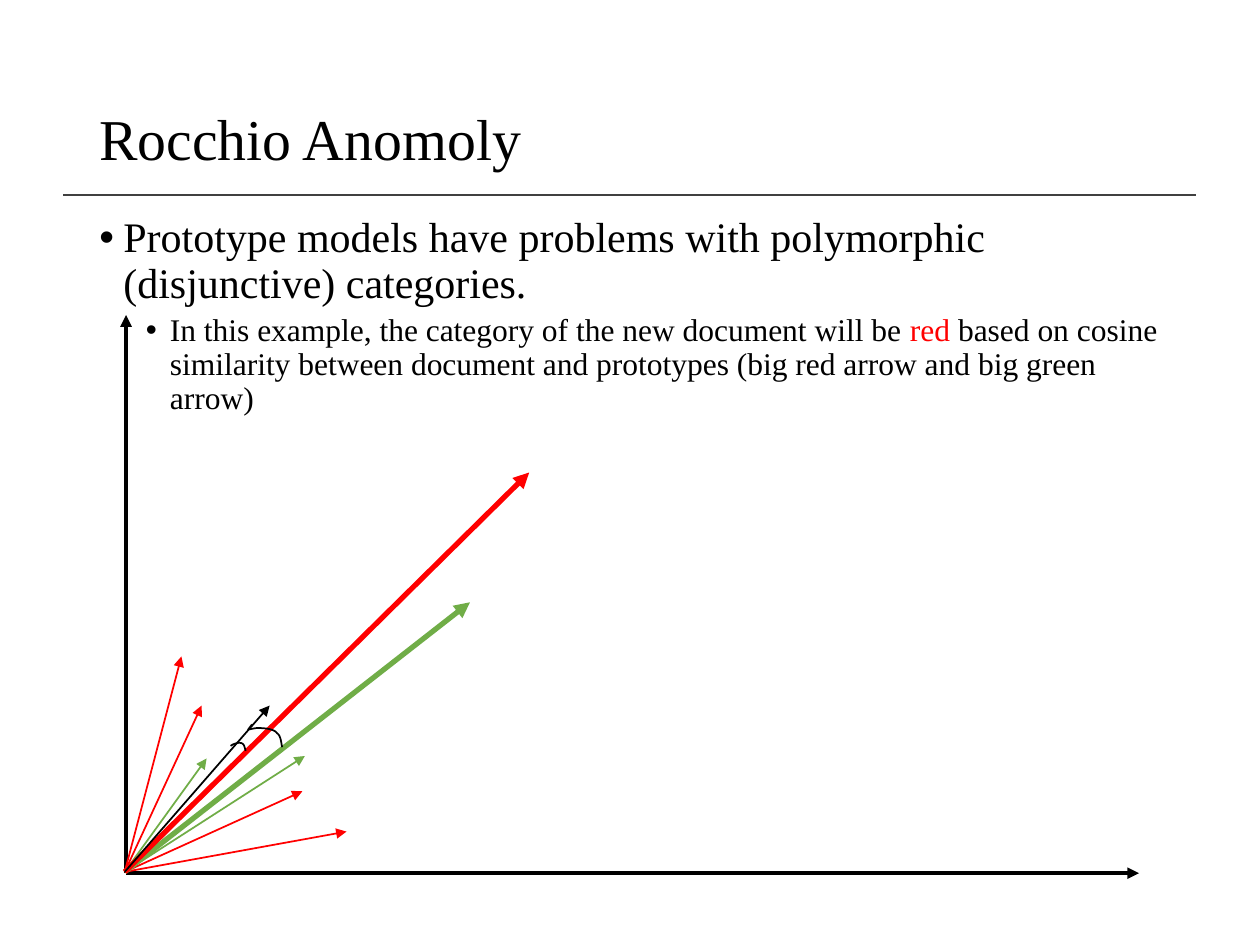
import lxml.etree
import pptx
import pptx.dml.color
import pptx.enum.shapes
import pptx.enum.text
import pptx.oxml.ns
import pptx.util

BLACK = pptx.dml.color.RGBColor(0x00, 0x00, 0x00)
GRAY = pptx.dml.color.RGBColor(0x40, 0x40, 0x40)
RED = pptx.dml.color.RGBColor(0xFF, 0x00, 0x00)
GREEN = pptx.dml.color.RGBColor(0x70, 0xAD, 0x47)
FONT = "Times New Roman"

COLUMNS, ROWS = 100, 75
SLIDE_WIDTH, SLIDE_HEIGHT = pptx.util.Inches(10), pptx.util.Inches(7.5)
ORIGIN = (9.9, 69.2)
CURVE_STEPS = 12

# Each bullet: size, left margin in columns, space before, runs of text and colour
BULLETS = [
    (24, 1.9, 7.5, [
        ("Prototype models have problems with polymorphic (disjunctive) categories.", BLACK),
    ]),
    (18, 5.6, 3.8, [
        ("In this example, the category of the new document will be ", BLACK),
        ("red", RED),
        (" based on cosine similarity between document and prototypes "
         "(big red arrow and big green arrow)", BLACK),
    ]),
]

# Each vector: tip, colour, line width
DOCUMENT_VECTORS = [
    ((14.4, 52.1), RED, 1),
    ((16, 56), RED, 1),
    ((16.4, 60.2), GREEN, 1),
    ((24.2, 60), GREEN, 1),
    ((24, 62.8), RED, 1),
    ((27.5, 66), RED, 1),
]
PROTOTYPE_VECTORS = [((37.3, 47.8), GREEN, 3), ((42, 37.5), RED, 3)]
NEW_DOCUMENT_TIP = (21.4, 56)

# Each angle mark: straight points, then cubic curves of two controls and an end
ANGLE_MARKS = [
    ([(18.3, 59.2)],
     [((18.6, 59), (19, 58.9), (19.2, 59)),
      ((19.4, 59.1), (19.4, 59.3), (19.5, 59.6))]),
    ([(20, 57.5), (19.7, 57.9)],
     [((19.8, 57.9), (20.5, 57.7), (20.8, 57.8)),
      ((21.2, 57.8), (21.8, 57.9), (22, 58.2)),
      ((22.3, 58.4), (22.3, 58.9), (22.4, 59.3))]),
]


def column(number):
    return round(SLIDE_WIDTH * number / COLUMNS)


def row(number):
    return round(SLIDE_HEIGHT * number / ROWS)


def add_text_area(slide, left, top, width, height, anchor):
    box = slide.shapes.add_textbox(column(left), row(top), column(width), row(height))
    frame = box.text_frame
    frame.word_wrap = True
    frame.vertical_anchor = anchor
    return frame


def add_run(paragraph, text, size, color):
    run = paragraph.add_run()
    run.text = text
    run.font.name = FONT
    run.font.size = pptx.util.Pt(size)
    run.font.color.rgb = color


def add_bullet(paragraph, size, margin, space_before, runs):
    paragraph.line_spacing = 0.9
    paragraph.space_before = pptx.util.Pt(space_before)
    properties = paragraph._p.get_or_add_pPr()
    properties.set("marL", str(column(margin)))
    properties.set("indent", str(column(-1.9)))
    font = lxml.etree.SubElement(properties, pptx.oxml.ns.qn("a:buFont"))
    font.set("typeface", "Arial")
    bullet = lxml.etree.SubElement(properties, pptx.oxml.ns.qn("a:buChar"))
    bullet.set("char", "•")
    for text, color in runs:
        add_run(paragraph, text, size, color)


def add_line(slide, start, end, color, width):
    line = slide.shapes.add_connector(
        pptx.enum.shapes.MSO_CONNECTOR.STRAIGHT,
        column(start[0]), row(start[1]), column(end[0]), row(end[1]))
    line.line.color.rgb = color
    line.line.width = pptx.util.Pt(width)
    lxml.etree.SubElement(line._element.spPr, pptx.oxml.ns.qn("a:effectLst"))
    return line


def add_arrow(slide, start, end, color, width):
    arrow = add_line(slide, start, end, color, width)
    head = lxml.etree.SubElement(arrow.line._get_or_add_ln(), pptx.oxml.ns.qn("a:tailEnd"))
    head.set("type", "triangle")


def curve_points(start, first_control, second_control, end):
    """Return points along a cubic Bezier curve, without its start."""
    points = []
    for step in range(1, CURVE_STEPS + 1):
        t = step / CURVE_STEPS
        weights = ((1 - t) ** 3, 3 * t * (1 - t) ** 2, 3 * t ** 2 * (1 - t), t ** 3)
        controls = (start, first_control, second_control, end)
        points.append(tuple(
            sum(weight * point[axis] for weight, point in zip(weights, controls))
            for axis in (0, 1)))
    return points


def add_angle_mark(slide, straight_points, curves):
    points = list(straight_points)
    for curve in curves:
        points += curve_points(points[-1], *curve)
    corners = [(column(x), row(y)) for x, y in points]
    builder = slide.shapes.build_freeform(*corners[0])
    builder.add_line_segments(corners[1:], close=False)
    mark = builder.convert_to_shape()
    mark.shadow.inherit = False
    mark.fill.background()
    mark.line.color.rgb = BLACK
    mark.line.width = pptx.util.Pt(1)


def add_heading(slide):
    add_line(slide, (5, 15.5), (94.9, 15.5), GRAY, 1)
    frame = add_text_area(slide, 6.9, 4, 86.2, 14.5, pptx.enum.text.MSO_ANCHOR.MIDDLE)
    paragraph = frame.paragraphs[0]
    paragraph.line_spacing = 0.9
    add_run(paragraph, "Rocchio Anomoly", 33, BLACK)


def add_body(slide):
    frame = add_text_area(slide, 6.9, 16.7, 86.2, 50.8, pptx.enum.text.MSO_ANCHOR.TOP)
    for index, bullet in enumerate(BULLETS):
        paragraph = frame.add_paragraph() if index else frame.paragraphs[0]
        add_bullet(paragraph, *bullet)


def add_vector_diagram(slide):
    for tip in ((10, 25), (90.4, 69.3)):
        add_arrow(slide, (10, 69.3), tip, BLACK, 2.25)
    for tip, color, width in DOCUMENT_VECTORS + PROTOTYPE_VECTORS:
        add_arrow(slide, ORIGIN, tip, color, width)
    for straight_points, curves in ANGLE_MARKS:
        add_angle_mark(slide, straight_points, curves)
    add_arrow(slide, ORIGIN, NEW_DOCUMENT_TIP, BLACK, 1)


def main():
    presentation = pptx.Presentation()
    presentation.slide_width, presentation.slide_height = SLIDE_WIDTH, SLIDE_HEIGHT
    slide = presentation.slides.add_slide(presentation.slide_layouts[6])
    add_heading(slide)
    add_body(slide)
    add_vector_diagram(slide)
    presentation.save("out.pptx")


if __name__ == "__main__":
    main()
